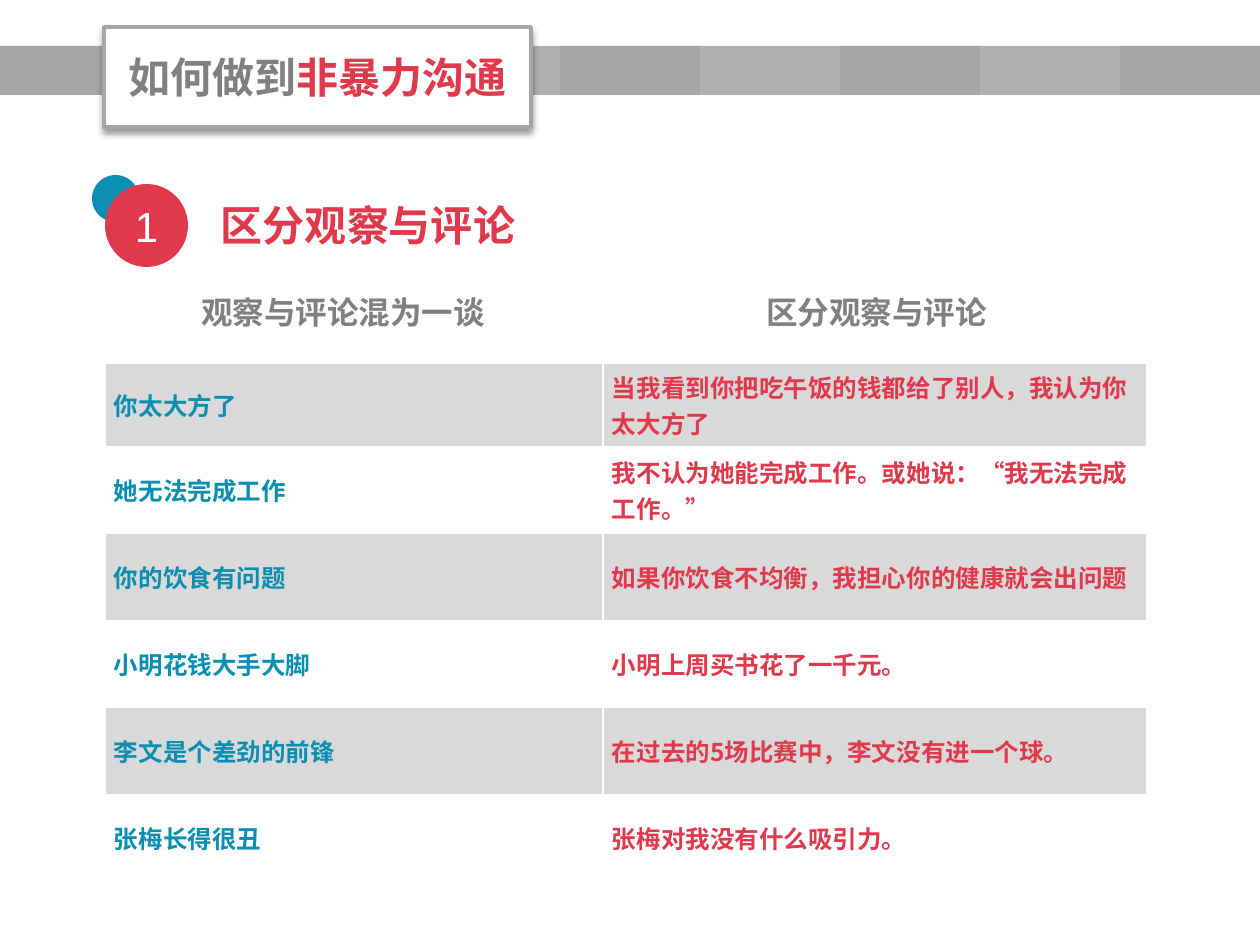
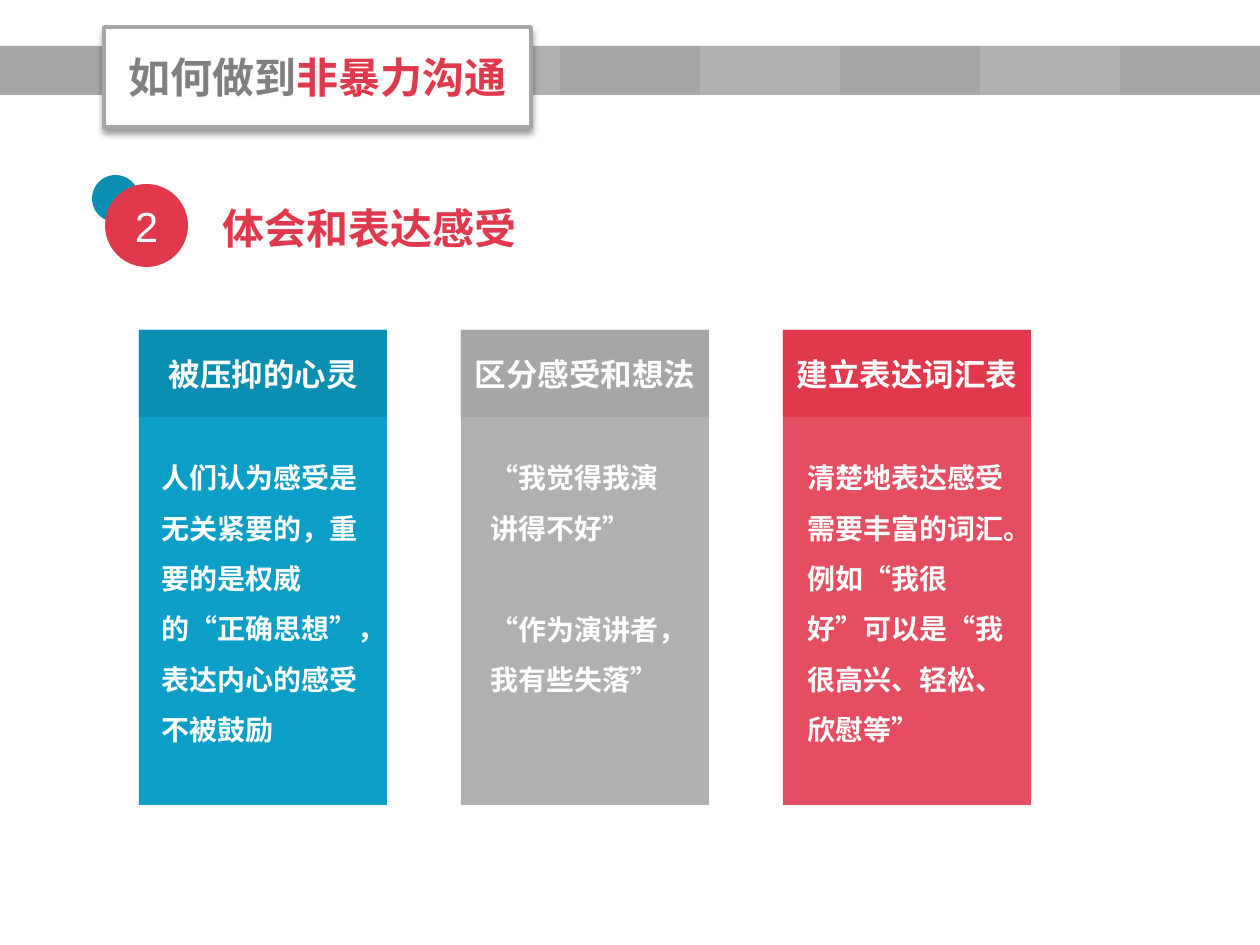
"""Build two slides on nonviolent communication: observations and feelings."""
from dataclasses import dataclass

from lxml import etree
from pptx import Presentation
from pptx.dml.color import RGBColor
from pptx.enum.shapes import MSO_SHAPE
from pptx.enum.text import MSO_ANCHOR, MSO_AUTO_SIZE, PP_ALIGN
from pptx.oxml.ns import qn
from pptx.util import Pt

RECT, OVAL = MSO_SHAPE.RECTANGLE, MSO_SHAPE.OVAL
LEFT, CENTER = PP_ALIGN.LEFT, PP_ALIGN.CENTER
TOP, MIDDLE = MSO_ANCHOR.TOP, MSO_ANCHOR.MIDDLE


@dataclass(frozen=True)
class Theme:
    """Colours, fonts and type sizes."""
    blue: str = "0A8EB2"
    blue_light: str = "0B9FC7"
    red: str = "E1394C"
    red_light: str = "E44E60"
    gray: str = "A6A6A6"
    gray_light: str = "B0B0B0"
    gray_text: str = "808080"
    stripe: str = "D9D9D9"
    white: str = "FFFFFF"
    font: str = "Noto Sans CJK SC"
    digit_font: str = "Arial"
    title: int = 24
    label: int = 18
    body: int = 16
    cell: int = 14


T = Theme()
TITLE = [("如何做到", T.gray_text), ("非暴力沟通", T.red)]
BAND_SLOTS = (0, 3, 4, 5, 6, 7, 8)

OBSERVE = {"number": "1", "text": "区分观察与评论", "at": (208, 194)}
FEEL = {"number": "2", "text": "体会和表达感受", "at": (210, 197)}

COLUMN_HEADS = [("观察与评论混为一谈", 188), ("区分观察与评论", 753)]
COLUMN_COLORS = (T.blue, T.red)
COLUMN_WIDTHS = (498, 544)
ROW_HEIGHTS = (83, 87, 87, 87, 87, 87)
ROWS = [
    ("你太大方了", "当我看到你把吃午饭的钱都给了别人，我认为你太大方了"),
    ("她无法完成工作", "我不认为她能完成工作。或她说：“我无法完成工作。”"),
    ("你的饮食有问题", "如果你饮食不均衡，我担心你的健康就会出问题"),
    ("小明花钱大手大脚", "小明上周买书花了一千元。"),
    ("李文是个差劲的前锋", "在过去的5场比赛中，李文没有进一个球。"),
    ("张梅长得很丑", "张梅对我没有什么吸引力。"),
]

CARDS = [
    {"head": "被压抑的心灵", "dark": T.blue, "light": T.blue_light, "text_w": 228,
     "body": ["人们认为感受是无关紧要的，重要的是权威的“正确思想”，表达内心的感受不被鼓励"]},
    {"head": "区分感受和想法", "dark": T.gray, "light": T.gray_light, "text_w": 214,
     "body": ["“我觉得我演讲得不好”", "“作为演讲者，我有些失落”"]},
    {"head": "建立表达词汇表", "dark": T.red, "light": T.red_light, "text_w": 223,
     "body": ["清楚地表达感受需要丰富的词汇。例如“我很好”可以是“我很高兴、轻松、欣慰等”"]},
]


def px(n):
    return round(n * 914400 / 126)


def box_px(*lengths):
    return [px(n) for n in lengths]


def write(tf, paragraphs, size, font=T.font, bold=True, align=LEFT, spacing=None, gap=0):
    """Fill a text frame with paragraphs, each a list of (text, colour) runs."""
    for i, runs in enumerate(paragraphs):
        p = tf.add_paragraph() if i else tf.paragraphs[0]
        p.alignment = align
        if spacing:
            p.line_spacing = spacing
        if i and gap:
            p.space_before = Pt(gap)
        for text, color in runs:
            r = p.add_run()
            r.text = text
            for name, value in {"size": Pt(size), "name": font, "bold": bold}.items():
                setattr(r.font, name, value)
            r.font.color.rgb = RGBColor.from_string(color)
            rPr = r._r.get_or_add_rPr()
            rPr.set("lang", "zh-CN")
            etree.SubElement(rPr, qn("a:ea"), typeface=font)


def set_frame(tf, anchor=TOP, margins=(13, 6)):
    side, end = box_px(*margins)
    frame = {"word_wrap": True, "auto_size": MSO_AUTO_SIZE.NONE, "vertical_anchor": anchor,
             "margin_left": side, "margin_right": side, "margin_top": end, "margin_bottom": end}
    for name, value in frame.items():
        setattr(tf, name, value)


def add_box(s, kind, x, y, w, h, color):
    sp = s.shapes.add_shape(kind, *box_px(x, y, w, h))
    sp.shadow.inherit = False
    sp.fill.solid()
    sp.fill.fore_color.rgb = RGBColor.from_string(color)
    sp.line.fill.background()
    set_frame(sp.text_frame, MIDDLE, (0, 0))
    return sp


def add_text(s, x, y, w, h, paragraphs, size, **style):
    tf = s.shapes.add_textbox(*box_px(x, y, w, h)).text_frame
    set_frame(tf)
    write(tf, paragraphs, size, **style)


def add_shadow(sp):
    sp.shadow.inherit = False
    effects = sp.element.spPr.find(qn("a:effectLst"))
    shadow = etree.SubElement(effects, qn("a:outerShdw"), blurRad=str(Pt(4)), dist=str(Pt(3)),
                              dir="5400000", algn="t", rotWithShape="0")
    black = etree.SubElement(shadow, qn("a:srgbClr"), val="000000")
    etree.SubElement(black, qn("a:alpha"), val="40000")


def style_title(title):
    title.left, title.top, title.width, title.height = box_px(104, 27, 427, 100)
    title.fill.solid()
    title.fill.fore_color.rgb = RGBColor.from_string(T.white)
    title.line.color.rgb = RGBColor.from_string(T.gray)
    title.line.width = Pt(2)
    add_shadow(title)
    set_frame(title.text_frame, MIDDLE)
    write(title.text_frame, [TITLE], T.title, align=CENTER)
    title.element.getparent().append(title.element)


def add_base(prs, section):
    """Add a slide with the band, the boxed title and the numbered section heading."""
    s = prs.slides.add_slide(prs.slide_layouts[5])
    for slot in BAND_SLOTS:
        add_box(s, RECT, slot * 140, 46, 140, 49, T.gray_light if slot % 2 else T.gray)
    style_title(s.shapes.title)
    add_box(s, OVAL, 92, 175, 47, 47, T.blue)
    badge = add_box(s, OVAL, 105, 184, 83, 83, T.red)
    write(badge.text_frame, [[(section["number"], T.white)]], T.title,
          font=T.digit_font, bold=False, align=CENTER)
    add_text(s, *section["at"], 546, 63, [[(section["text"], T.red)]], T.title)
    return s


def set_borders(cell):
    tcPr = cell._tc.get_or_add_tcPr()
    for i, side in enumerate(("a:lnL", "a:lnR", "a:lnT", "a:lnB")):
        ln = etree.Element(qn(side), w=str(Pt(1)))
        fill = etree.SubElement(ln, qn("a:solidFill"))
        etree.SubElement(fill, qn("a:srgbClr"), val=T.white)
        tcPr.insert(i, ln)


def add_comparison(s):
    for head, x in COLUMN_HEADS:
        add_text(s, x, 287, 357, 51, [[(head, T.gray_text)]], T.label)
    frame = s.shapes.add_table(len(ROWS), len(COLUMN_WIDTHS),
                               *box_px(105, 363, sum(COLUMN_WIDTHS), sum(ROW_HEIGHTS)))
    table = frame.table
    table.first_row = table.horz_banding = False
    for column, width in zip(table.columns, COLUMN_WIDTHS):
        column.width = px(width)
    for i, (texts, height) in enumerate(zip(ROWS, ROW_HEIGHTS)):
        table.rows[i].height = px(height)
        for j, (text, color) in enumerate(zip(texts, COLUMN_COLORS)):
            cell = table.cell(i, j)
            cell.vertical_anchor = MIDDLE
            cell.margin_left = cell.margin_right = px(9)
            cell.margin_top = cell.margin_bottom = px(6)
            cell.fill.solid()
            cell.fill.fore_color.rgb = RGBColor.from_string(T.white if i % 2 else T.stripe)
            set_borders(cell)
            write(cell.text_frame, [[(text, color)]], T.cell)


def add_cards(s):
    left, top, width, height, pitch = 139, 330, 248, 475, 322
    for i, card in enumerate(CARDS):
        x = left + i * pitch
        add_box(s, RECT, x, top, width, height, card["light"])
        head = add_box(s, RECT, x, top, width, 87, card["dark"])
        write(head.text_frame, [[(card["head"], T.white)]], T.label, align=CENTER)
        text_x = x + (width - card["text_w"]) // 2
        add_text(s, text_x, top + 108, card["text_w"], 318,
                 [[(text, T.white)] for text in card["body"]], T.body, spacing=1.5, gap=29)


def main():
    prs = Presentation()
    prs.slide_width, prs.slide_height = box_px(1260, 945)
    add_comparison(add_base(prs, OBSERVE))
    add_cards(add_base(prs, FEEL))
    prs.save("out.pptx")


if __name__ == "__main__":
    main()
